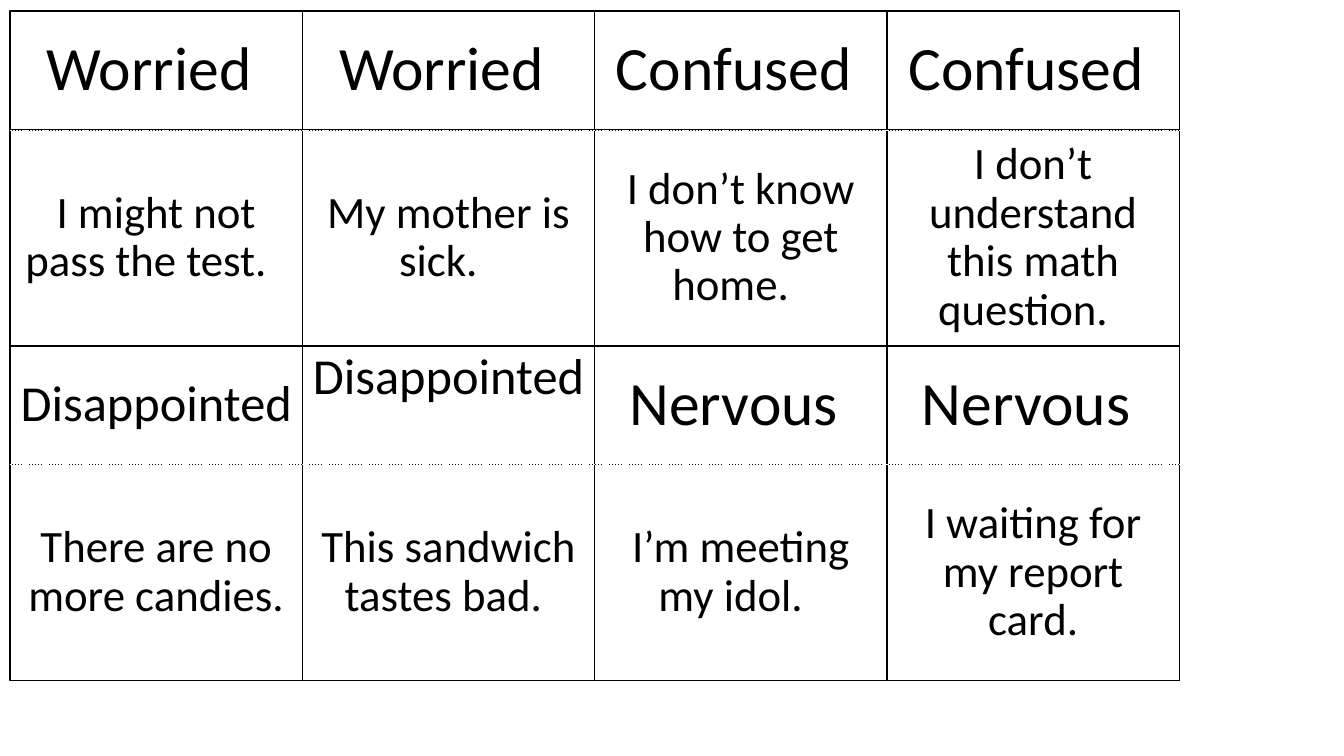
from dataclasses import dataclass

from lxml.etree import SubElement
from pptx import Presentation
from pptx.dml.color import RGBColor
from pptx.enum.dml import MSO_LINE as Dash
from pptx.enum.shapes import MSO_CONNECTOR as Link, MSO_SHAPE as Form
from pptx.enum.text import MSO_ANCHOR as Anchor, MSO_AUTO_SIZE as Fit, PP_ALIGN as Align
from pptx.oxml.ns import qn
from pptx.shapes.autoshape import Shape
from pptx.slide import Slide
from pptx.util import Pt

LEFT, TOP = 7.2, 8
WIDTH = 208.8
HEAD, BODY = 85, 154
FONT = "Calibri"
BLACK, WHITE = "000000", "FFFFFF"


@dataclass
class Card:
    mood: str
    cause: str
    size: int = 44


ROWS = [
    [
        Card("Worried ", "I might not pass the test.  "),
        Card("Worried ", "My mother is sick.  "),
        Card("Confused ", "I don’t know how to get home.  "),
        Card("Confused ", "I don’t understand this math question.  "),
    ],
    [
        Card("Disappointed ", "There are no more candies.", 36),
        Card("Disappointed  ", "This sandwich tastes bad. ", 36),
        Card("Nervous ", "I’m meeting my idol.  "),
        Card("Nervous ", "I waiting for my report card."),
    ],
]


def color(code: str) -> RGBColor:
    return RGBColor.from_string(code)


def style(box: Shape, text: str, size: int) -> None:
    """Give a box its outline, fill and centred text."""
    box.shadow.inherit = False
    box.fill.solid()
    box.fill.fore_color.rgb = color(WHITE)
    box.line.color.rgb = color(BLACK)
    box.line.width = Pt(1)
    frame = box.text_frame
    frame.text = text
    frame.word_wrap = True
    frame.auto_size = Fit.NONE
    frame.vertical_anchor = Anchor.MIDDLE
    para = frame.paragraphs[0]
    para.alignment = Align.CENTER
    para.line_spacing = 0.9
    font = para.runs[0].font
    font.name = FONT
    font.size = Pt(size)
    font.color.rgb = color(BLACK)


def place(slide: Slide, left: float, top: float, height: float) -> Shape:
    return slide.shapes.add_shape(
        Form.RECTANGLE, Pt(left), Pt(top), Pt(WIDTH), Pt(height)
    )


def draw_card(slide: Slide, card: Card, row: int, col: int) -> None:
    left = LEFT + col * WIDTH
    top = TOP + row * (HEAD + BODY)
    if row == col == 0:
        head = slide.shapes.title
        head.left, head.top = Pt(left), Pt(top)
        head.width, head.height = Pt(WIDTH), Pt(HEAD)
    else:
        head = place(slide, left, top, HEAD)
    style(head, card.mood, card.size)
    style(place(slide, left, top + HEAD, BODY), card.cause, 32)


def draw_fold(slide: Slide, row: int) -> None:
    """Draw the dashed fold between the moods and causes of a row."""
    level = Pt(TOP + row * (HEAD + BODY) + HEAD)
    right = Pt(LEFT + len(ROWS[row]) * WIDTH)
    fold = slide.shapes.add_connector(Link.STRAIGHT, Pt(LEFT), level, right, level)
    fold.line.color.rgb = color(WHITE)
    fold.line.width = Pt(0.5)
    fold.line.dash_style = Dash.SQUARE_DOT
    SubElement(fold._element.spPr, qn("a:effectLst"))


def main() -> None:
    deck = Presentation()
    deck.slide_width, deck.slide_height = Pt(960), Pt(540)
    slide = deck.slides.add_slide(deck.slide_layouts[5])
    for row, cards in enumerate(ROWS):
        for col, card in enumerate(cards):
            draw_card(slide, card, row, col)
    for row in range(len(ROWS)):
        draw_fold(slide, row)
    deck.save("out.pptx")


if __name__ == "__main__":
    main()
